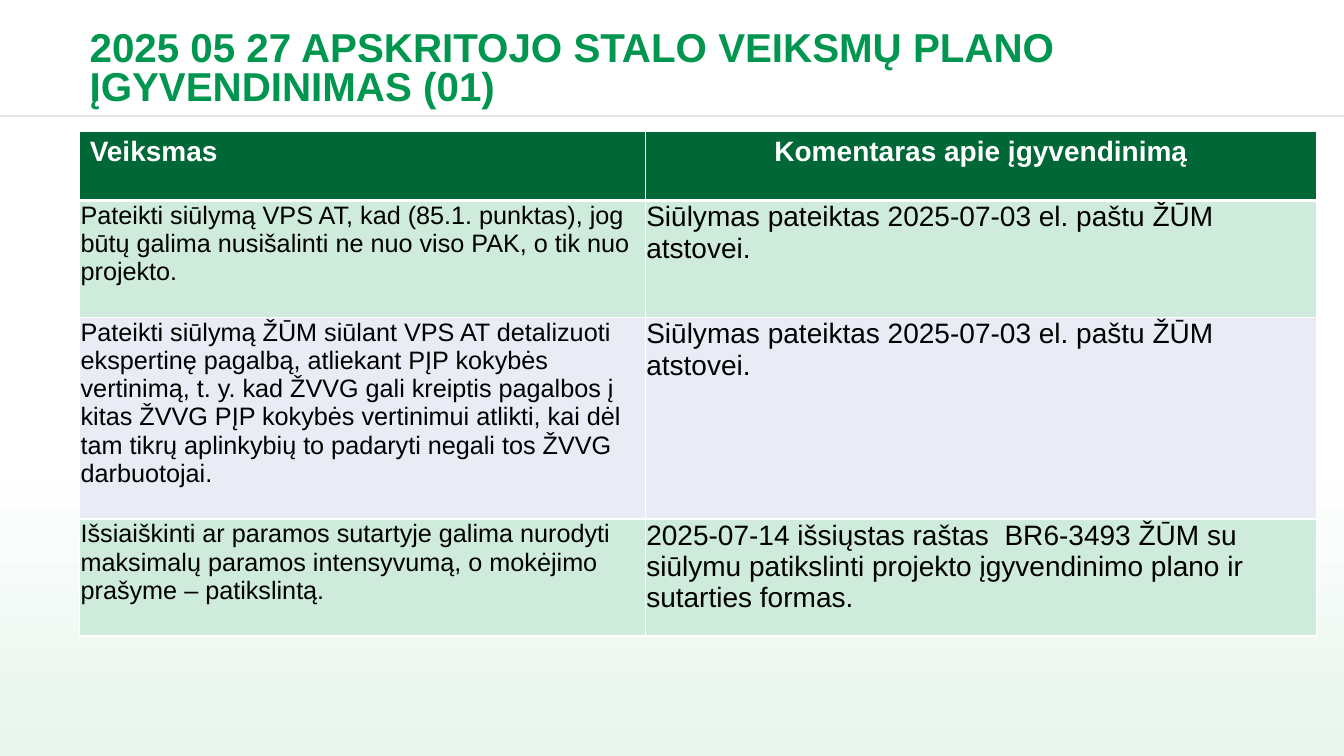
from lxml import etree
from pptx import Presentation
from pptx.dml.color import RGBColor
from pptx.enum.shapes import MSO_CONNECTOR, MSO_SHAPE
from pptx.enum.text import MSO_ANCHOR, PP_ALIGN
from pptx.oxml.ns import qn
from pptx.util import Inches, Pt

RECT, LINE = MSO_SHAPE.RECTANGLE, MSO_CONNECTOR.STRAIGHT
MIDDLE, LEFT, CENTER = MSO_ANCHOR.MIDDLE, PP_ALIGN.LEFT, PP_ALIGN.CENTER

# Content
TITLE = "2025 05 27 APSKRITOJO STALO VEIKSMŲ PLANO ĮGYVENDINIMAS (01)"
HEAD = ("Veiksmas", "Komentaras apie įgyvendinimą")
ROWS = [
    ("Pateikti siūlymą VPS AT, kad (85.1. punktas), jog būtų galima nusišalinti "
     "ne nuo viso PAK, o tik nuo projekto.",
     "Siūlymas pateiktas 2025-07-03 el. paštu ŽŪM atstovei."),
    ("Pateikti siūlymą ŽŪM siūlant VPS AT detalizuoti ekspertinę pagalbą, "
     "atliekant PĮP kokybės vertinimą, t. y. kad ŽVVG gali kreiptis pagalbos į "
     "kitas ŽVVG PĮP kokybės vertinimui atlikti, kai dėl tam tikrų aplinkybių to "
     "padaryti negali tos ŽVVG darbuotojai.",
     "Siūlymas pateiktas 2025-07-03 el. paštu ŽŪM atstovei."),
    ("Išsiaiškinti ar paramos sutartyje galima nurodyti maksimalų paramos "
     "intensyvumą, o mokėjimo prašyme – patikslintą.",
     "2025-07-14 išsiųstas raštas  BR6-3493 ŽŪM su siūlymu patikslinti projekto "
     "įgyvendinimo plano ir sutarties formas."),
]

# Theme and layout
THEME = {
    "font": "Arial", "title": "009650", "head": "006837", "text": "000000",
    "white": "FFFFFF", "tint": "E9F5EF", "rule": "E6E6E6",
    "bands": ("CEEBDB", "E9EBF5"),
    "title_size": 28.8, "head_size": 20, "body_sizes": (18, 20),
}
WIDE, HIGH = 13.33, 7.5
RULE_Y = 1.15
TABLE_X, TABLE_Y = 0.79, 1.3
COLS = (5.61, 6.66)
HEIGHTS = (0.69, 1.16, 2.0, 1.16)
PAD = {"margin_left": 0.01, "margin_right": 0.01, "margin_top": 0.01, "margin_bottom": 0}


def color(name):
    return RGBColor.from_string(THEME.get(name, name))


def write(frame, text, size, tone, bold=False, align=LEFT):
    para = frame.paragraphs[0]
    para.alignment = align
    run = para.add_run()
    run.text = text
    look = {"name": THEME["font"], "size": Pt(size), "bold": bold}
    for key, value in look.items():
        setattr(run.font, key, value)
    run.font.color.rgb = color(tone)
    return para


def border(cell, widths):
    props = cell._tc.get_or_add_tcPr()
    for side, width in zip("LRTB", widths):
        edge = etree.SubElement(props, qn(f"a:ln{side}"), w=str(Pt(width)))
        fill = etree.SubElement(edge, qn("a:solidFill"))
        etree.SubElement(fill, qn("a:srgbClr"), val=THEME["white"])


def backdrop(slide):
    back = slide.shapes.add_shape(RECT, 0, 0, Inches(WIDE), Inches(HIGH))
    back.shadow.inherit = False
    back.line.fill.background()
    back.fill.gradient()
    back.fill.gradient_angle = 90
    for stop, (place, tone) in zip(back.fill.gradient_stops, ((0, "tint"), (0.4, "white"))):
        stop.position = place
        stop.color.rgb = color(tone)
    rule = slide.shapes.add_connector(LINE, 0, Inches(RULE_Y), Inches(WIDE), Inches(RULE_Y))
    rule.line.color.rgb = color("rule")
    rule.line.width = Pt(1)
    etree.SubElement(rule._element.spPr, qn("a:effectLst"))


def heading(slide):
    box = slide.shapes.add_textbox(Inches(0.79), Inches(0.24), Inches(10.68), Inches(0.92))
    frame = box.text_frame
    frame.word_wrap = True
    frame.vertical_anchor = MIDDLE
    write(frame, TITLE, THEME["title_size"], "title", True).line_spacing = 0.8


def actions(slide):
    grid = slide.shapes.add_table(
        len(HEIGHTS), len(COLS), Inches(TABLE_X), Inches(TABLE_Y),
        Inches(sum(COLS)), Inches(sum(HEIGHTS))).table
    grid.horz_banding = False
    for col, width in zip(grid.columns, COLS):
        col.width = Inches(width)
    for row, height in zip(grid.rows, HEIGHTS):
        row.height = Inches(height)

    for i, texts in enumerate([HEAD, *ROWS]):
        for j, text in enumerate(texts):
            cell = grid.cell(i, j)
            border(cell, (1, 1, 3 if i == 1 else 1, 3 if i == 0 else 1))
            cell.fill.solid()
            if i == 0:
                cell.fill.fore_color.rgb = color("head")
                write(cell.text_frame, text, THEME["head_size"], "white", True,
                      (LEFT, CENTER)[j])
            else:
                cell.fill.fore_color.rgb = color(THEME["bands"][(i - 1) % 2])
                for key, value in PAD.items():
                    setattr(cell, key, Inches(value))
                write(cell.text_frame, text, THEME["body_sizes"][j], "text")


def main():
    deck = Presentation()
    deck.slide_width, deck.slide_height = Inches(WIDE), Inches(HIGH)
    slide = deck.slides.add_slide(deck.slide_layouts[6])
    backdrop(slide)
    heading(slide)
    actions(slide)
    deck.save("out.pptx")


if __name__ == "__main__":
    main()
